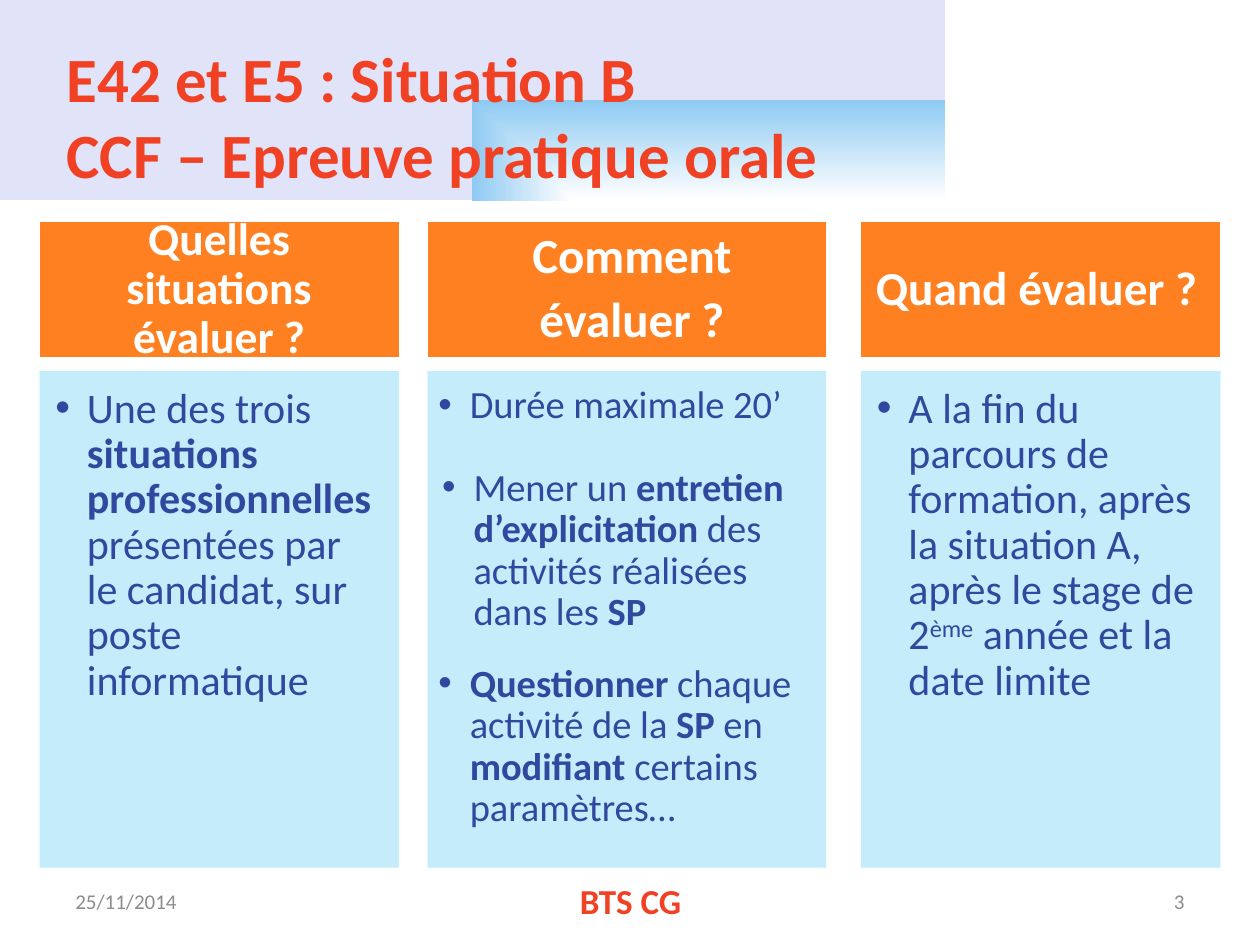
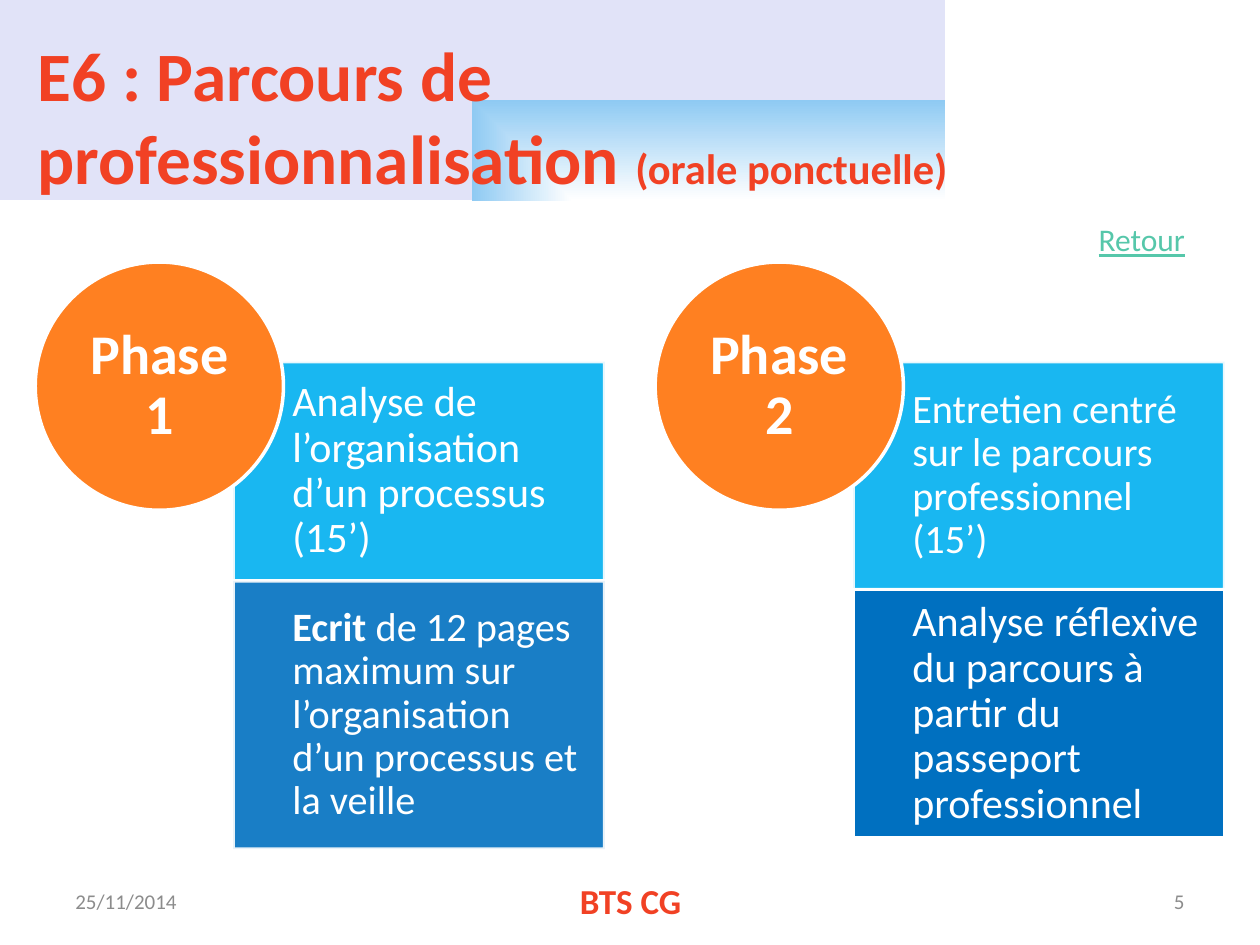
import pptx
import pptx.util
import pptx.dml.color
import pptx.enum.shapes
import pptx.enum.text
import pptx.oxml.ns
import lxml.etree

Inches = pptx.util.Inches
RGBColor = pptx.dml.color.RGBColor
Align = pptx.enum.text.PP_ALIGN
Anchor = pptx.enum.text.MSO_ANCHOR
Preset = pptx.enum.shapes.MSO_SHAPE
qn = pptx.oxml.ns.qn

WHITE = RGBColor(0xFF, 0xFF, 0xFF)
RED = RGBColor(0xF1, 0x41, 0x24)
ORANGE = RGBColor(0xFF, 0x80, 0x21)
PALE_BLUE = RGBColor(0xBF, 0xEB, 0xFA)
SKY = RGBColor(0x00, 0xB0, 0xF0)
BLUE = RGBColor(0x00, 0x70, 0xC0)
NAVY = RGBColor(0x31, 0x48, 0x9F)
GREY = RGBColor(0x8C, 0x8C, 0x8C)
GREEN = RGBColor(0x56, 0xC7, 0xAA)
BAND_STOPS = [(0, WHITE), (100, RGBColor(0x8F, 0xCA, 0xF3)),
              (100, RGBColor(0xC1, 0xC7, 0xF2)), (100, RGBColor(0xE1, 0xE3, 0xF8))]

BOLD = {"bold": True}
SUPERSCRIPT = {"baseline": 30}


def add_span(para, text, size, color, bold=False, underline=False, baseline=0):
    span = para.add_run()
    span.text = text
    span.font.name = "Calibri"
    span.font.size = pptx.util.Pt(size)
    span.font.color.rgb = color
    span.font.bold = bold
    if underline:
        span.font.underline = True
    if baseline:
        span.font._element.set("baseline", str(baseline * 1000))


def write(frame, paragraphs, align=Align.LEFT, anchor=Anchor.MIDDLE, insets=(0.1, 0.05, 0.1, 0.05),
          line_spacing=None, gaps=(), indents=(), wrap=True, **style):
    frame.word_wrap = wrap
    frame.vertical_anchor = anchor
    frame.margin_left, frame.margin_top, frame.margin_right, frame.margin_bottom = map(Inches, insets)
    for index, spans in enumerate(paragraphs):
        para = frame.add_paragraph() if index else frame.paragraphs[0]
        para.alignment = align
        if line_spacing:
            para.line_spacing = line_spacing
        if index and gaps:
            para.space_before = pptx.util.Pt(gaps[index - 1])
        if indents:
            props = para._p.get_or_add_pPr()
            props.set("marL", str(Inches(indents[index])))
            props.set("indent", str(Inches(-0.25)))
            lxml.etree.SubElement(props, qn("a:buFont"), typeface="Arial")
            lxml.etree.SubElement(props, qn("a:buChar"), char="•")
        for span in spans:
            text, changes = (span, {}) if isinstance(span, str) else span
            for line_number, line in enumerate(text.split("\n")):
                if line_number:
                    para.add_line_break()
                add_span(para, line, **{**style, **changes})


class Painter:
    def __init__(self):
        self.deck = pptx.Presentation()
        self.deck.slide_width = Inches(10)
        self.deck.slide_height = Inches(7.5)
        self.page = None

    def start_page(self, number, title, left, size):
        self.page = self.deck.slides.add_slide(self.deck.slide_layouts[6])
        self.band()
        self.text(left, 0.29, 9, 1.25, [title], size=size, color=RED, bold=True)
        self.text(0.5, 6.95, 2.33, 0.4, [["25/11/2014"]], size=12, color=GREY)
        self.text(3.42, 6.95, 3.17, 0.4, [["BTS CG"]], size=20, color=RED, bold=True, align=Align.CENTER)
        self.text(7.17, 6.95, 2.33, 0.4, [[number]], size=12, color=GREY, align=Align.RIGHT)

    def band(self):
        band = self.page.shapes.add_shape(Preset.RECTANGLE, 0, 0, Inches(7.5), Inches(1.59))
        band.shadow.inherit = False
        band.line.fill.background()
        band.fill.gradient()
        gradient = band.element.spPr.find(qn("a:gradFill"))
        for child in list(gradient):
            gradient.remove(child)
        stops = lxml.etree.SubElement(gradient, qn("a:gsLst"))
        for position, color in BAND_STOPS:
            stop = lxml.etree.SubElement(stops, qn("a:gs"), pos=str(position * 1000))
            lxml.etree.SubElement(stop, qn("a:srgbClr"), val=str(color))
        focus = lxml.etree.SubElement(gradient, qn("a:path"), {"path": "rect"})
        lxml.etree.SubElement(focus, qn("a:fillToRect"), l="100000", t="100000")

    def text(self, left, top, width, height, paragraphs, **style):
        box = self.page.shapes.add_textbox(*map(Inches, (left, top, width, height)))
        write(box.text_frame, paragraphs, **style)

    def panel(self, left, top, width, height, fill, paragraphs, preset=Preset.RECTANGLE,
              opacity=100, **style):
        panel = self.page.shapes.add_shape(preset, *map(Inches, (left, top, width, height)))
        panel.shadow.inherit = False
        panel.fill.solid()
        panel.fill.fore_color.rgb = fill
        panel.line.color.rgb = WHITE
        panel.line.width = pptx.util.Pt(2)
        if opacity < 100:
            for color in panel.element.spPr.iter(qn("a:srgbClr")):
                lxml.etree.SubElement(color, qn("a:alpha"), val=str(opacity * 1000))
        write(panel.text_frame, paragraphs, line_spacing=0.9, **style)

    def column(self, left, width, heading, heading_size, heading_insets, points, size, insets,
               indents=(0.25,), gaps=()):
        self.panel(left, 1.75, width, 1.1, ORANGE, heading, size=heading_size, color=WHITE,
                   bold=True, align=Align.CENTER, insets=heading_insets, gaps=(6,))
        self.panel(left, 2.93, width, 3.97, PALE_BLUE, points, opacity=90, size=size, color=NAVY,
                   anchor=Anchor.TOP, insets=insets, indents=indents, gaps=gaps)

    def phase(self, left, name, steps):
        top = 2.87
        for height, fill, opacity, size, spans in steps:
            self.panel(left + 1.57, top, 2.95, height, fill, [spans], opacity=opacity, size=size,
                       color=WHITE, insets=(0.47, 0.18, 0.18, 0.18))
            top += height
        self.panel(left, 2.08, 1.97, 1.97, ORANGE, [[name]], preset=Preset.OVAL, size=32,
                   color=WHITE, bold=True, align=Align.CENTER, insets=(0, 0, 0, 0))


def build_situation_b(painter):
    painter.start_page("3", ["E42 et E5 : Situation B\nCCF – Epreuve pratique orale"], 0.43, 36)
    side_insets = (0.14, 0.14, 0.19, 0.21)
    painter.column(0.3, 2.88, [["Quelles situations évaluer ?"]], 26, (0.2, 0.12, 0.2, 0.12),
                   [["Une des trois ", ("situations professionnelles ", BOLD),
                     "présentées par le candidat, sur poste informatique"]], 24, side_insets)
    painter.column(3.38, 3.19, [["Comment"], ["évaluer ?"]], 28, (0.22, 0.12, 0.14, 0.12),
                   [["Durée maximale 20’"],
                    ["Mener un ", ("entretien d’explicitation ", BOLD),
                     "des activités réalisées dans les ", ("SP", BOLD)],
                    [("Questionner", BOLD), " chaque activité de la ", ("SP", BOLD), " en ",
                     ("modifiant", BOLD), " certains paramètres…"]],
                   22, (0.1, 0.13, 0.2, 0.19), indents=(0.25, 0.28, 0.25), gaps=(23.3, 17))
    painter.column(6.82, 2.88, [["Quand évaluer ?"]], 27, (0.13, 0.12, 0.2, 0.12),
                   [["A la fin du parcours de formation, après la situation A, après le stage de 2",
                     ("ème", SUPERSCRIPT), " année et la date limite"]], 24, side_insets)


def build_career_path(painter):
    painter.start_page("5", ["E6 : Parcours de\nprofessionnalisation ",
                             ("(orale ponctuelle)", {"size": 24.3})], 0.2, 39.6)
    painter.phase(0.28, "Phase 1", [
        (1.74, SKY, 90, 24, ["Analyse de l’organisation d’un processus (15’)"]),
        (2.13, BLUE, 90, 23, [("Ecrit ", BOLD),
                              "de 12 pages maximum sur l’organisation d’un processus et la veille"])])
    painter.phase(5.2, "Phase 2", [
        (1.81, SKY, 90, 23, ["Entretien centré sur le parcours professionnel (15’)"]),
        (1.97, BLUE, 100, 24, ["Analyse réflexive du parcours à partir du passeport professionnel"])])
    painter.text(8.62, 1.7, 0.89, 0.4, [["Retour"]], size=18, color=GREEN, underline=True,
                 anchor=Anchor.TOP, wrap=False)


def main():
    painter = Painter()
    build_situation_b(painter)
    build_career_path(painter)
    painter.deck.save("out.pptx")


if __name__ == "__main__":
    main()
